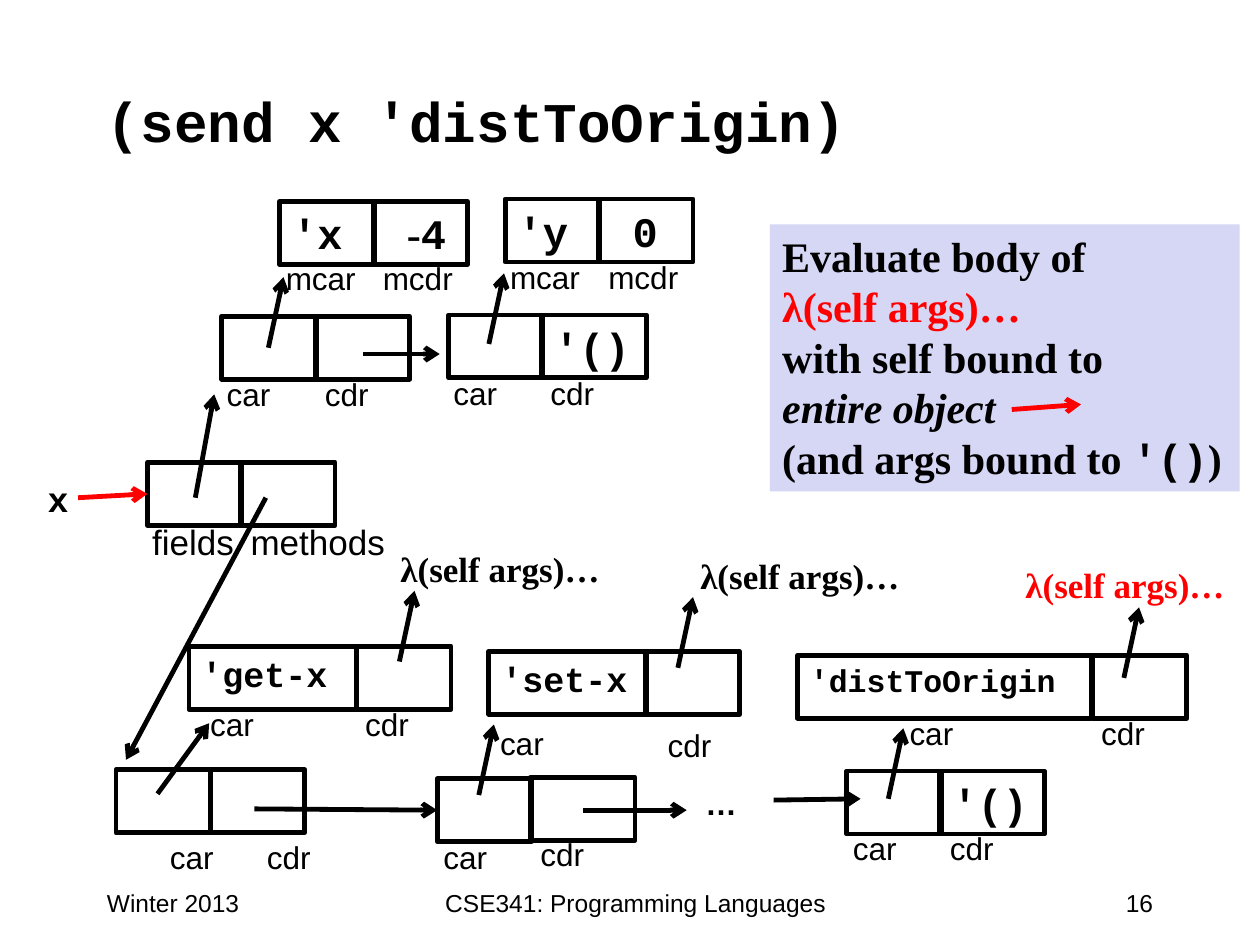
from lxml.etree import SubElement
from pptx import Presentation
from pptx.dml.color import RGBColor
from pptx.enum.shapes import MSO_CONNECTOR, MSO_SHAPE
from pptx.enum.text import MSO_ANCHOR, MSO_AUTO_SIZE, PP_ALIGN
from pptx.oxml.ns import qn
from pptx.util import Inches, Pt

INK = {"black": "000000", "red": "FF0000", "pale": "D6D6F5"}
SANS, MONO, SERIF = "Arial", "Courier New", "Times New Roman"
THICK = Pt(2.75)

deck = Presentation()
deck.slide_width, deck.slide_height = Inches(10), Inches(7.5)
COL, ROW = deck.slide_width / 100, deck.slide_height / 75
slide = deck.slides.add_slide(deck.slide_layouts[6])
shapes = slide.shapes


def write(text, x, y, w, h, size=18, font=SANS, color="black", bold=False,
          align=PP_ALIGN.LEFT, anchor=MSO_ANCHOR.TOP, wrap=False,
          frame=False, fill=None, inset=1):
    spot = [round(n) for n in (x * COL, y * ROW, w * COL, h * ROW)]
    if frame or fill:
        shape = shapes.add_shape(MSO_SHAPE.RECTANGLE, *spot)
        shape.shadow.inherit = False
        shape.fill.background()
        shape.line.fill.background()
        if frame:
            shape.line.color.rgb = RGBColor.from_string(INK["black"])
            shape.line.width = THICK
        if fill:
            shape.fill.solid()
            shape.fill.fore_color.rgb = RGBColor.from_string(INK[fill])
    else:
        shape = shapes.add_textbox(*spot)
    body = shape.text_frame
    body.word_wrap = wrap
    body.auto_size = MSO_AUTO_SIZE.NONE if wrap else MSO_AUTO_SIZE.SHAPE_TO_FIT_TEXT
    body.vertical_anchor = anchor
    body.margin_left = round(inset * COL)
    lines = [[(text, {})]] if isinstance(text, str) else text
    for i, line in enumerate(lines):
        para = body.paragraphs[0] if i == 0 else body.add_paragraph()
        para.alignment = align
        for words, look in line:
            if not words:
                continue
            run = para.add_run()
            run.text = words
            run.font.size = Pt(size)
            run.font.bold = bold
            run.font.italic = look.get("italic", False)
            run.font.name = look.get("font", font)
            run.font.color.rgb = RGBColor.from_string(INK[look.get("color", color)])
    return shape


def link(x1, y1, x2, y2, color="black", goal=None):
    ends = [round(n) for n in (x1 * COL, y1 * ROW, x2 * COL, y2 * ROW)]
    line = shapes.add_connector(MSO_CONNECTOR.STRAIGHT, *ends)
    if goal is not None:
        line.end_connect(goal, 1)
    line.line.color.rgb = RGBColor.from_string(INK[color])
    line.line.width = THICK
    SubElement(line.line._get_or_add_ln(), qn("a:tailEnd"), type="arrow")
    SubElement(line._element.spPr, qn("a:effectLst"))


write("(send x 'distToOrigin)", 7.5, 3.3, 88.3, 12.5, size=32, font=MONO,
      bold=True, anchor=MSO_ANCHOR.MIDDLE, wrap=True)
for text, x, w, align in [
    ("Winter 2013", 7.5, 20.8, PP_ALIGN.LEFT),
    ("16", 71.7, 20.8, PP_ALIGN.RIGHT),
    ("CSE341: Programming Languages", 31.7, 37.5, PP_ALIGN.CENTER),
]:
    write(text, x, 70, w, 5, size=14, align=align, wrap=True)

minus = [[("-", {"font": SERIF}), ("4", {})]]
wide = {"car": 5.5, "cdr": 5.5, "mcar": 7.6, "mcdr": 7.6, "fields": 8.6, "methods": 12.8}
cells = {}
for key, x, y, w, text, size, inset, name, dx, dy in [
    ("object", 11.7, 36.7, 7.5, "", 20, 1, "fields", -0.6, 4.1),
    ("methods", 19.1, 36.7, 7.5, "", 20, 1, "methods", -0.2, 4.1),
    ("x", 22.2, 16, 7.5, "'x", 24, 1, "mcar", -0.5, 4.1),
    ("x value", 29.6, 16, 7.5, minus, 24, 2.7, "mcdr", -0.2, 4.1),
    ("y", 40.1, 15.8, 7.5, "'y", 24, 1, "mcar", -0.6, 4.2),
    ("y value", 47.5, 15.8, 7.5, "0", 24, 2.7, "mcdr", -0.2, 4.2),
    ("field 1", 17.6, 25.1, 7.5, "", 18, 1, "car", -0.6, 4.2),
    ("field 1 next", 25, 25.1, 7.5, "", 18, 1, "cdr", -0.2, 4.2),
    ("field 2", 35.6, 25, 7.5, "", 18, 1, "car", -0.6, 4.2),
    ("field 2 next", 43, 25, 8.3, "'()", 24, 1, "cdr", -0.3, 4.2),
    ("get", 15, 51.3, 13.3, "'get-x", 20, 1, "car", 0.7, 4.2),
    ("get body", 28.3, 51.3, 7.5, "", 18, 1, "cdr", -0.3, 4.2),
    ("set", 38.8, 51.7, 12.5, "'set-x", 20, 1, "car", -0.1, 5.3),
    ("set body", 51.2, 51.7, 7.5, "", 18, 1, "cdr", 0.8, 5.4),
    ("dist", 63.3, 52, 23.3, "'distToOrigin", 18, 1, "car", 7.9, 4.2),
    ("dist body", 86.7, 52, 7.5, "", 18, 1, "cdr", -0.3, 4.2),
    ("method 1", 9.2, 61.1, 7.5, "", 18, 1, "car", 3.3, 4.9),
    ("method 1 next", 16.7, 61.1, 7.5, "", 18, 1, "cdr", 3.5, 4.9),
    ("method 2", 34.7, 61.8, 7.5, "", 18, 1, "car", -0.5, 4.2),
    ("method 2 next", 42.1, 61.7, 8.3, "", 18, 1, "cdr", -0.2, 4.1),
    ("method 3", 67.2, 61.2, 7.5, "", 18, 1, "car", -0.5, 4.1),
    ("method 3 next", 74.6, 61.2, 8.3, "'()", 24, 1, "cdr", -0.2, 4.1),
]:
    cells[key] = write(text, x, y, w, 5, size=size, font=MONO, bold=True,
                       wrap=True, frame=True, inset=inset)
    big = name in ("fields", "methods")
    write(name, x + dx, y + dy, wide[name], 4.4 if big else 4, size=20 if big else 18)

write("x", 2.8, 37.4, 3.7, 4.4, size=20, font=MONO, bold=True)
write("…", 55, 61.7, 4.5, 4, bold=True)
for x, y, color in [(30.8, 43, "black"), (54.6, 43.5, "black"), (80.4, 44.2, "red")]:
    write("λ(self args)…", x, y, 18.7, 4.4, size=20, font=SERIF, color=color, bold=True)

write([
    [("Evaluate body of", {})],
    [("λ(self args)…", {"color": "red"})],
    [("with self bound to", {})],
    [("entire object", {"italic": True})],
    [("(and args bound to ", {}), ("'()", {"font": MONO}), (")", {})],
], 61.1, 17.8, 37.3, 21.2, size=24, font=SERIF, bold=True, fill="pale")

for x, y in [(21.3, 27.6), (38.8, 27.3), (38, 63.1), (70.5, 63.4),
             (31.7, 52.5), (53.8, 53), (89.2, 53.8)]:
    link(x, y, x + 1.2, y - 5.6)
for ends in [(15.5, 39.5, 17, 31.3), (28.8, 28.1, 34.9, 28.1), (12.5, 63, 16.6, 57.4),
             (21.1, 39.5, 10, 60.3), (46.3, 64.3, 54.5, 64.3), (61.4, 63.5, 68.3, 63.4)]:
    link(*ends)
link(20.2, 64.2, 34.7, 64.3, goal=cells["method 2"])
link(6.2, 39.5, 11.7, 39.2, color="red", goal=cells["object"])
link(80.3, 32.5, 85.8, 32.1, color="red")

deck.save("out.pptx")
